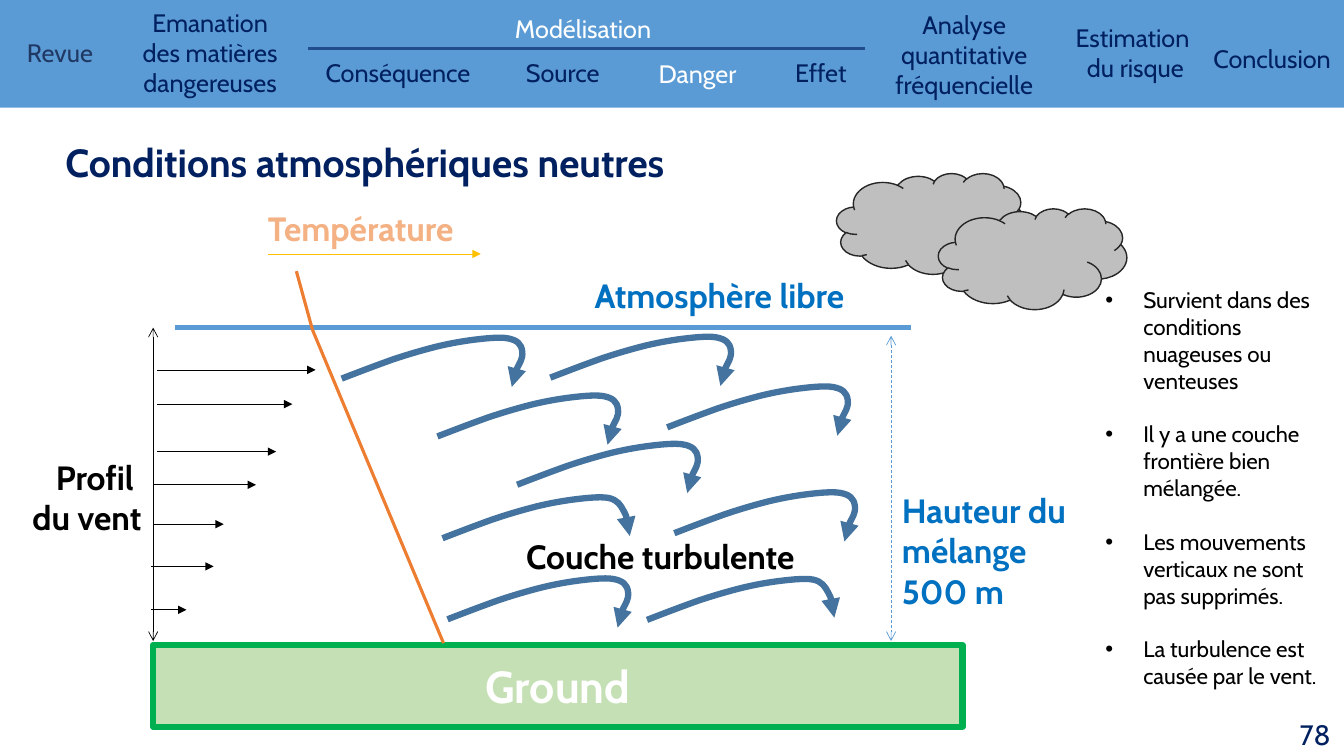
import pptx
import pptx.util
import pptx.dml.color
import pptx.enum.shapes
import pptx.enum.text
import pptx.oxml.ns
import lxml.etree

Pt = pptx.util.Pt
SHAPE = pptx.enum.shapes.MSO_SHAPE
ALIGN = pptx.enum.text.PP_ALIGN
ANCHOR = pptx.enum.text.MSO_ANCHOR
qn = pptx.oxml.ns.qn

FONT = "Cabin"
COLORS = {
    "navy": "002060", "dark": "203864", "white": "FFFFFF", "black": "000000",
    "header": "5B9BD5", "rule": "224D8C", "blue": "0070C0", "swirl": "43739E",
    "ground": "C5E0B4", "green": "00B050", "orange": "ED7D31",
    "peach": "F4B183", "gold": "FFC000", "cloud": "BFBFBF", "outline": "262626",
}

# lines, left, top, width, height, color, alignment
NAV = [
    (["Revue"], 12.2, 23, 80, 29, "dark", ALIGN.LEFT),
    (["Effet"], 523.4, 37.4, 126, 28, "navy", ALIGN.CENTER),
    (["Conséquence"], 220.3, 37.4, 128, 29, "navy", ALIGN.CENTER),
    (["Danger"], 439.2, 38, 118, 27, "white", ALIGN.CENTER),
    (["Source"], 330.5, 37.4, 143, 29, "navy", ALIGN.CENTER),
    (["Modélisation"], 220.3, 5.8, 392.4, 29, "white", ALIGN.CENTER),
    (["Conclusion"], 852.5, 27.4, 112.3, 31, "navy", ALIGN.CENTER),
    (["Analyse quantitative fréquencielle"], 625.7, 2.9, 126, 69, "navy", ALIGN.CENTER),
    (["Estimation ", "du risque"], 748, 12.2, 126, 50, "navy", ALIGN.CENTER),
    (["Emanation des matières dangereuses"], 91.4, 1.4, 117.4, 72, "navy", ALIGN.CENTER),
]
LABELS = [
    (["Atmosphère libre"], 417.6, 193, 222.5, 36, "blue", ALIGN.LEFT),
    (["Hauteur du", "mélange", "500 m"], 637.2, 346.3, 158.4, 94.3, "blue", ALIGN.LEFT),
    (["Profil ", "du vent"], 1.4, 322.6, 106.6, 65.5, "black", ALIGN.RIGHT),
    (["Température"], 184.3, 144.7, 172, 36, "peach", ALIGN.LEFT),
    (["Couche turbulente"], 320.4, 379.4, 254.2, 36, "black", ALIGN.RIGHT),
]
BULLETS = [
    "Survient dans des conditions nuageuses ou venteuses",
    "Il y a une couche frontière bien mélangée.",
    "Les mouvements verticaux ne sont pas supprimés.",
    "La turbulence est causée par le vent.",
]
# start x, end x, y
WIND_ARROWS = [
    (112.3, 225.4, 264.2), (112.3, 208.8, 288.7), (112.3, 197.3, 322.6),
    (109.4, 182.9, 346.3), (109.4, 159.8, 374.4), (108, 152.6, 404.6),
    (108, 133.2, 435.6),
]
CLOUDS = [(597.6, 123.8), (670.3, 149)]

# Bezier control points relative to the start of a swirl
RISE = [
    (12.4, -4.8), (24.8, -9.5), (36, -13.5), (47.2, -17.3), (58.3, -20.5),
    (67.5, -22.8), (76.7, -25), (83.2, -26.2), (91.6, -27.4), (100, -28.5),
    (112.4, -30), (118.6, -28.8),
]
HOOK = RISE + [(125, -27.6), (128.4, -25), (129, -19.4),
               (129.6, -13.8), (120.6, -0.7), (121.5, 5.9)]
DROP = RISE + [(125, -27.4), (127, -24), (129.5, -19.4),
               (132, -14.6), (132.6, -8), (133.8, -1.6)]
SWIRLS = [
    (481.7, 380.9, HOOK), (462.2, 442.8, DROP), (319.7, 442.4, HOOK),
    (369.4, 346.3, HOOK), (316.1, 384.5, DROP), (476.6, 305.3, HOOK),
    (393.1, 269.8, HOOK), (312.5, 311.8, HOOK), (244.1, 270.5, HOOK),
]


def rgb(name):
    return pptx.dml.color.RGBColor.from_string(COLORS[name])


def write(sp, lines, size, color, align, bold=False, anchor=ANCHOR.TOP):
    tf = sp.text_frame
    tf.word_wrap = True
    tf.vertical_anchor = anchor
    tf.text = "\n".join(lines)
    for p in tf.paragraphs:
        p.alignment = align
        p.font.name, p.font.size, p.font.bold = FONT, Pt(size), bold
        p.font.color.rgb = rgb(color)
    return tf


def add_text(slide, lines, x, y, w, h, color, align, size, **style):
    sp = slide.shapes.add_textbox(Pt(x), Pt(y), Pt(w), Pt(h))
    return write(sp, lines, size, color, align, **style)


def add_block(slide, kind, x, y, w, h, fill, line=None, width=1):
    sp = slide.shapes.add_shape(kind, Pt(x), Pt(y), Pt(w), Pt(h))
    sp.shadow.inherit = False
    sp.fill.solid()
    sp.fill.fore_color.rgb = rgb(fill)
    if line:
        sp.line.color.rgb = rgb(line)
        sp.line.width = Pt(width)
    else:
        sp.line.fill.background()
    return sp


def add_heads(sp, head=None, tail=None):
    """Put arrowheads at the start (head) and end (tail) of a line."""
    ln = sp.line._get_or_add_ln()
    for tag, kind in (("a:headEnd", head), ("a:tailEnd", tail)):
        if kind:
            lxml.etree.SubElement(ln, qn(tag), type=kind)


def add_line(slide, x1, y1, x2, y2, color, width, head=None, tail=None, dash=None):
    line = slide.shapes.add_connector(
        pptx.enum.shapes.MSO_CONNECTOR.STRAIGHT, Pt(x1), Pt(y1), Pt(x2), Pt(y2))
    line.line.color.rgb = rgb(color)
    line.line.width = Pt(width)
    if dash:
        line.line.dash_style = dash
    add_heads(line, head, tail)
    lxml.etree.SubElement(line._element.spPr, qn("a:effectLst"))


def add_swirl(slide, x, y, offsets):
    """Draw a curved arrow; each three offsets make one Bezier segment."""
    fb = slide.shapes.build_freeform(Pt(x), Pt(y))
    fb.add_line_segments([(Pt(x + dx), Pt(y + dy)) for dx, dy in offsets], close=False)
    sp = fb.convert_to_shape()
    sp.shadow.inherit = False
    sp.fill.background()
    sp.line.color.rgb = rgb("swirl")
    sp.line.width = Pt(4.5)
    add_heads(sp, tail="triangle")
    segments = list(sp._element.iter(qn("a:lnTo")))
    for i in range(0, len(segments), 3):
        curve = lxml.etree.SubElement(segments[i].getparent(), qn("a:cubicBezTo"))
        for segment in segments[i:i + 3]:
            curve.append(segment[0])
            segment.getparent().remove(segment)


def add_bullets(slide):
    tf = add_text(slide, BULLETS, 782.6, 200.9, 180, 298, "black", ALIGN.LEFT, 16)
    for i, p in enumerate(tf.paragraphs):
        p.space_before = Pt(19.2 if i else 0)
        pPr = p._p.get_or_add_pPr()
        pPr.set("marL", str(Pt(27)))
        pPr.set("indent", str(-Pt(27)))
        bullet_font = lxml.etree.Element(qn("a:buFont"), typeface="Arial")
        bullet = lxml.etree.Element(qn("a:buChar"), char="•")
        defaults = pPr.find(qn("a:defRPr"))
        defaults.addprevious(bullet_font)
        defaults.addprevious(bullet)


def main():
    prs = pptx.Presentation()
    prs.slide_width, prs.slide_height = Pt(960), Pt(540)
    slide = prs.slides.add_slide(prs.slide_layouts[6])

    add_block(slide, SHAPE.RECTANGLE, 0, 0, 960, 77, "header")
    for item in NAV:
        add_text(slide, *item, size=18)
    add_line(slide, 220.3, 34.6, 617.8, 34.6, "rule", 2.25)
    add_text(slide, ["78"], 733.7, 509.8, 223.9, 28.8, "navy", ALIGN.RIGHT, 20,
             anchor=ANCHOR.MIDDLE)
    add_text(slide, ["Conditions atmosphériques neutres"], 39.6, 95, 918, 45,
             "navy", ALIGN.LEFT, 28, bold=True)

    ground = add_block(slide, SHAPE.RECTANGLE, 109.4, 460.8, 578.2, 58.3,
                       "ground", "green", 4.5)
    write(ground, ["Ground"], 32, "white", ALIGN.CENTER, bold=True, anchor=ANCHOR.MIDDLE)
    add_line(slide, 125.3, 234, 650.9, 234, "header", 3)
    add_line(slide, 636.5, 239.8, 636.5, 457.9, "header", 0.5, "arrow", "arrow",
             pptx.enum.dml.MSO_LINE.DASH)
    add_line(slide, 109.4, 234, 109.4, 457.9, "black", 0.5, "arrow", "arrow")
    for x1, x2, y in WIND_ARROWS:
        add_line(slide, x1, y, x2, y, "black", 0.5, tail="triangle")
    add_line(slide, 316.8, 459.4, 223.2, 235.6, "orange", 2.25)
    add_line(slide, 223.2, 235.6, 211.7, 193.7, "orange", 2.25)
    add_line(slide, 191.5, 181.4, 343.4, 181.4, "gold", 0.5, tail="triangle")

    for swirl in SWIRLS:
        add_swirl(slide, *swirl)
    for label in LABELS:
        add_text(slide, *label, size=24, bold=True)
    for x, y in CLOUDS:
        add_block(slide, SHAPE.CLOUD, x, y, 134.6, 72, "cloud", "outline")
    add_bullets(slide)
    prs.save("out.pptx")


if __name__ == "__main__":
    main()
